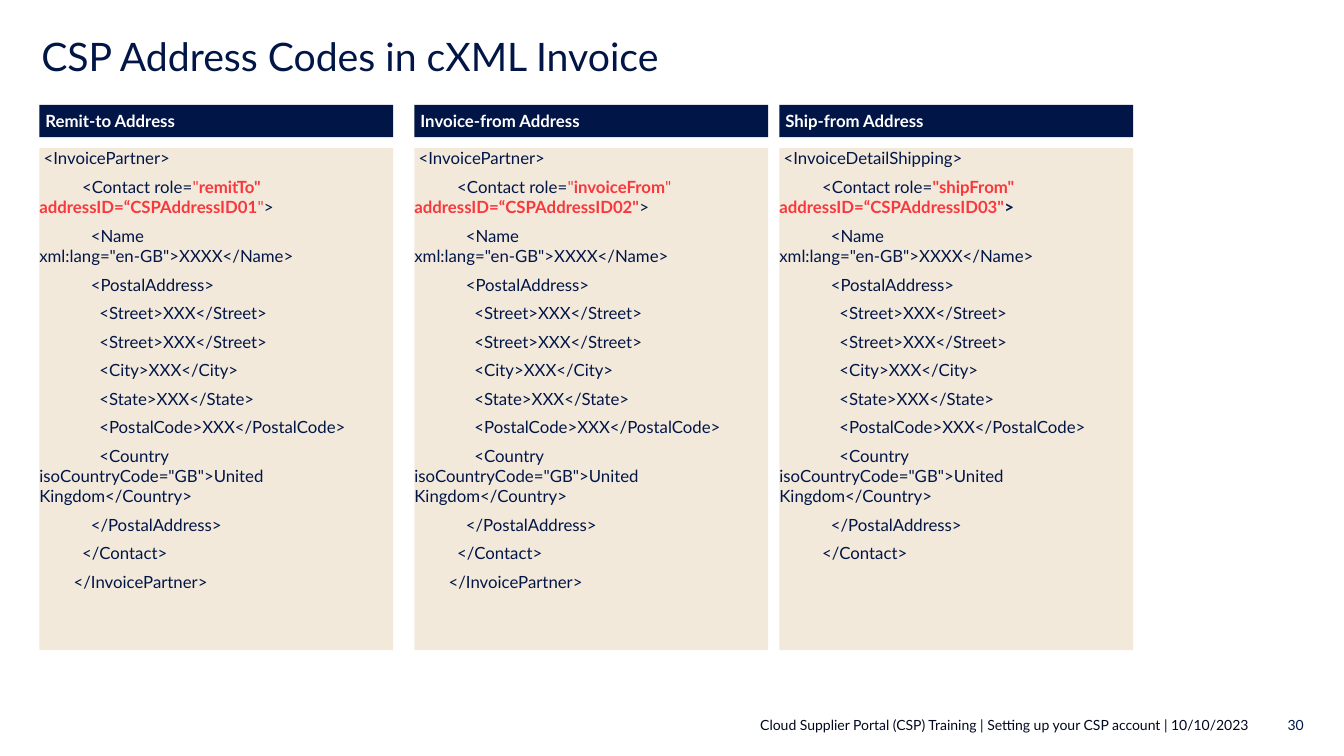
"""Build the slide that shows address codes in a cXML invoice."""
from pptx import Presentation
from pptx.dml.color import RGBColor
from pptx.enum.shapes import MSO_SHAPE
from pptx.enum.text import MSO_ANCHOR, PP_ALIGN
from pptx.util import Inches, Pt

RECT = MSO_SHAPE.RECTANGLE
TOP = MSO_ANCHOR.TOP
LEFT, RIGHT = PP_ALIGN.LEFT, PP_ALIGN.RIGHT
NAVY = RGBColor(0x01, 0x15, 0x46)
INK = RGBColor(0x02, 0x08, 0x1E)
SAND = RGBColor(0xF2, 0xE9, 0xDB)
RED = RGBColor(0xF9, 0x38, 0x3D)
WHITE = RGBColor(0xFF, 0xFF, 0xFF)

ADDRESS = (
    '            <Name xml:lang="en-GB">XXXX</Name>',
    '            <PostalAddress>',
    '              <Street>XXX</Street>',
    '              <Street>XXX</Street>',
    '              <City>XXX</City>',
    '              <State>XXX</State>',
    '              <PostalCode>XXX</PostalCode>',
    '              <Country isoCountryCode="GB">United Kingdom</Country>',
    '            </PostalAddress>',
    '          </Contact>',
)
PARTNER_END = ('        </InvoicePartner>',)
COLUMNS = (
    (0.39, 'Remit-to Address', ' <InvoicePartner>',
     (('"', RED, False), ('remitTo" addressID=“CSPAddressID01', RED, True),
      ('"', RED, False), ('>', NAVY, False)), PARTNER_END),
    (4.11, 'Invoice-from Address', ' <InvoicePartner>',
     (('"', RED, False), ('invoiceFrom', RED, True), ('" ', RED, False),
      ('addressID=“CSPAddressID02"', RED, True), ('>', NAVY, False)), PARTNER_END),
    (7.73, 'Ship-from Address', ' <InvoiceDetailShipping>',
     (('"shipFrom" addressID=“CSPAddressID03"', RED, True),
      ('>', NAVY, True)), ()),
)


def write(shape, lines, size=12, color=NAVY, bold=False, align=LEFT,
          after=0, spacing=1.0, inset=0):
    frame = shape.text_frame
    frame.word_wrap = True
    frame.vertical_anchor = TOP
    frame.margin_left = frame.margin_right = Inches(inset)
    frame.margin_top = frame.margin_bottom = Inches(inset)
    for index, line in enumerate(lines):
        para = frame.add_paragraph() if index else frame.paragraphs[0]
        para.alignment = align
        para.space_after = Pt(after)
        para.line_spacing = spacing
        runs = ((line, color, bold),) if isinstance(line, str) else line
        for text, tint, heavy in runs:
            run = para.add_run()
            run.text = text
            run.font.name = 'Lato'
            run.font.size = Pt(size)
            run.font.bold = heavy
            run.font.color.rgb = tint


class Deck:
    def __init__(self):
        self.show = Presentation()
        self.show.slide_width = Inches(13.33)
        self.show.slide_height = Inches(7.5)
        self.slide = self.show.slides.add_slide(self.show.slide_layouts[6])

    def panel(self, box, fill, lines, **style):
        shape = self.slide.shapes.add_shape(RECT, *map(Inches, box))
        shape.shadow.inherit = False
        shape.fill.solid()
        shape.fill.fore_color.rgb = fill
        shape.line.fill.background()
        write(shape, lines, after=6, **style)

    def label(self, box, text, **style):
        write(self.slide.shapes.add_textbox(*map(Inches, box)), [text], **style)


def main():
    deck = Deck()
    for left, head, first, role, last in COLUMNS:
        contact = (('          <Contact role=', NAVY, False),) + role
        deck.panel((left, 1.47, 3.51, 4.98), SAND,
                   (first, contact) + ADDRESS + last)
        deck.panel((left, 1.04, 3.51, 0.32), NAVY, [head],
                   color=WHITE, bold=True, inset=0.06)
    deck.label((0.41, 0.37, 11.97, 0.79), 'CSP Address Codes in cXML Invoice',
               size=28, spacing=0.9)
    deck.label((6.67, 7.11, 5.71, 0.39),
               'Cloud Supplier Portal (CSP) Training | '
               'Setting up your CSP account | 10/10/2023',
               size=10, color=INK, align=RIGHT)
    deck.label((12.38, 7.11, 0.55, 0.39), '30', size=10, align=RIGHT)
    deck.show.save("out.pptx")


if __name__ == "__main__":
    main()
